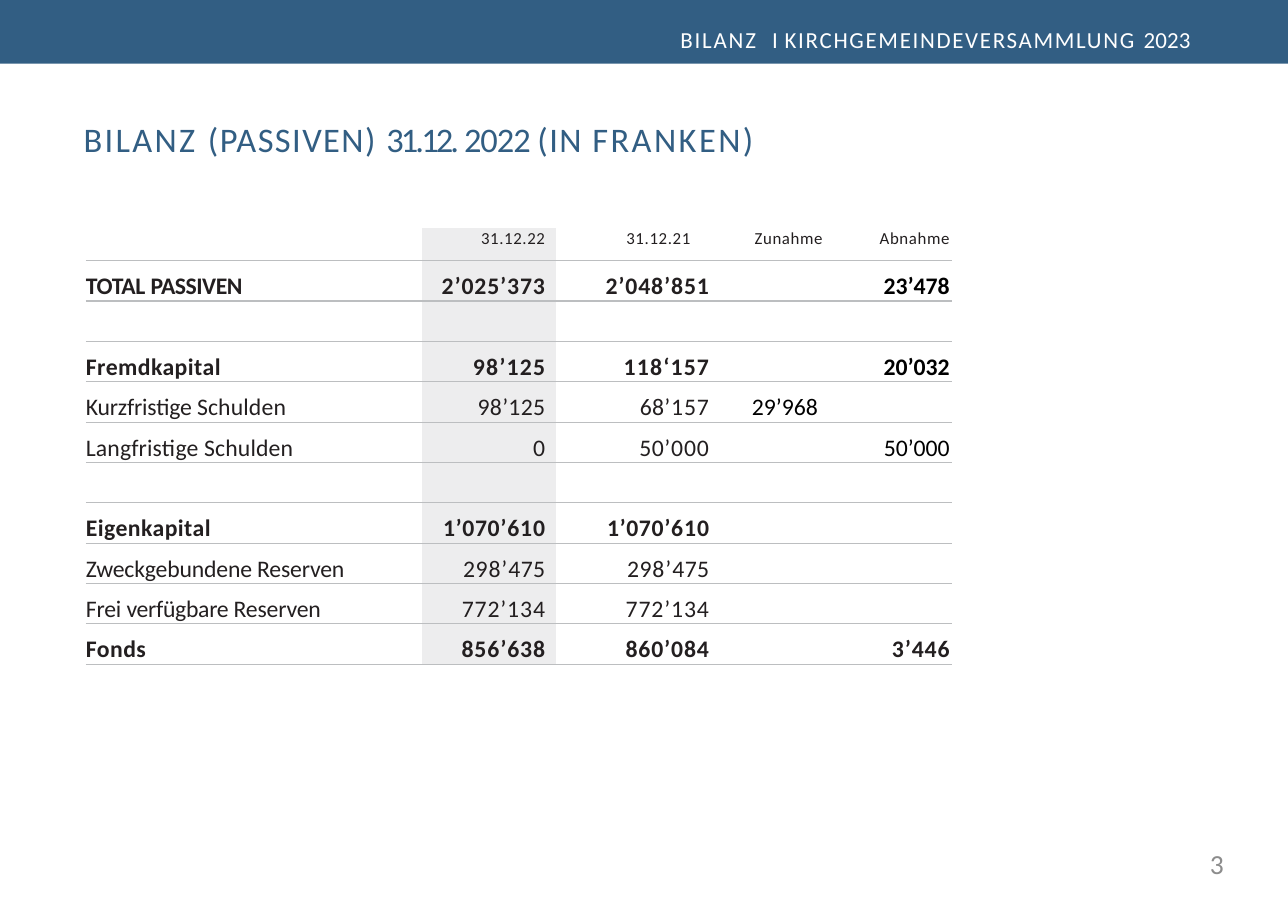
import pptx
import pptx.dml.color
import pptx.enum.shapes
import pptx.enum.text
import pptx.oxml
import pptx.oxml.ns
import pptx.util

Cm = pptx.util.Cm
Pt = pptx.util.Pt
RGBColor = pptx.dml.color.RGBColor
Align = pptx.enum.text.PP_ALIGN
Anchor = pptx.enum.text.MSO_ANCHOR

BLUE = RGBColor(0x32, 0x5E, 0x83)
WHITE = RGBColor(0xFF, 0xFF, 0xFF)
INK = RGBColor(0x23, 0x1F, 0x20)
BLACK = RGBColor(0x00, 0x00, 0x00)
PAGE_GREY = RGBColor(0x8C, 0x8C, 0x8C)
COLUMN_GREY = RGBColor(0xED, 0xED, 0xEE)
RULE_GREY = RGBColor(0xBC, 0xBE, 0xC0)

NO_MARGINS = dict.fromkeys(
    ("margin_left", "margin_right", "margin_top", "margin_bottom"), 0)

# Each text is a list of (wording, letter spacing in points)
HEADINGS = [[], [("31.12.22", 0.4)], [("31.12.21", 0.4)],
            [("Z", 0.3), ("unahme", 0.4)], [("Abnahme", 0.4)]]
EQUITY = [("1’070", 0.4), ("’610", 0.6)]
RESERVES = [("2", 0.4), ("98’", 0.6), ("4", 0.4), ("7", 0.1), ("5", 0)]
FREE_RESERVES = [("772’134", 0.6)]

# Bold, colour of the change, cells from left to right
BALANCE = [
    (True, BLACK, [[("TOTAL ", -0.2), ("PASSIVEN", -0.3)], [("2’025’373", 0.6)],
                   [("2’048’851", 0.6)], [], [("23’478", 0)]]),
    None,
    (True, BLACK, [[("Fremdkapital", 0.3)], [("98’125", 0.8)],
                   [("118‘157", 0.8)], [], [("20’032", 0)]]),
    (False, BLACK, [[("Kurzfristige ", -0.1), ("Schulden", 0.1)], [("98’125", 0.2)],
                    [("68", 0.2), ("’157", 0.6)], [("29’968", 0)], []]),
    (False, BLACK, [[("Langfristige Schulden", 0.1)], [("0", 0.3)],
                    [("50", 0.3), ("’000", 0.6)], [], [("50’000", 0)]]),
    None,
    (True, BLACK, [[("Eigenkapital", 0.3)], EQUITY, EQUITY, [], []]),
    (False, BLACK, [[("Zweckgebundene Reserven", -0.1)], RESERVES, RESERVES, [], []]),
    (False, BLACK, [[("Frei ", -0.1), ("verfügbare ", -0.2), ("Reserven", -0.1)],
                    FREE_RESERVES, FREE_RESERVES, [], []]),
    (True, INK, [[("Fonds", 0.3)], [("856’638", 0.6)], [("860’084", 0.6)],
                 [], [("3’446", 0.6)]]),
]

COLUMN_WIDTHS = [7.75, 3.1, 3.78, 2.79, 2.55]
RIGHT_MARGINS = [0, 0.26, 0.26, 0, 0.05]
HEADING_MARGINS = [0, 0.26, 0.69, 0.43, 0.05]
INCREASE_INDENT = 0.73
HEADING_HEIGHT, ROW_HEIGHT = 0.75, 0.93


def assign(target, values):
    for name, value in values.items():
        setattr(target, name, value)


class BalanceSlide:
    font_name = "Calibri"
    rule_width = Pt(0.88)

    def __init__(self, deck):
        self.slide = deck.slides.add_slide(deck.slide_layouts[6])

    def typeset(self, paragraph, pieces, size, color, bold=False, align=Align.LEFT, before=0):
        assign(paragraph, {"alignment": align, "space_before": Pt(before)})
        for wording, spacing in pieces:
            run = paragraph.add_run()
            run.text = wording
            assign(run.font, {"name": self.font_name, "size": Pt(size), "bold": bold})
            run.font.color.rgb = color
            run._r.get_or_add_rPr().set("spc", str(round(spacing * 100)))
        if not pieces:
            end = pptx.oxml.parse_xml(
                f'<a:endParaRPr {pptx.oxml.ns.nsdecls("a")} sz="{round(size * 100)}"/>')
            paragraph._p.append(end)

    def band(self, left, top, width, height, color):
        band = self.slide.shapes.add_shape(
            pptx.enum.shapes.MSO_SHAPE.RECTANGLE, left, top, width, height)
        band.shadow.inherit = False
        band.fill.solid()
        band.fill.fore_color.rgb = color
        band.line.fill.background()

    def text(self, left, top, width, height, pieces, size, color, align=Align.LEFT):
        frame = self.slide.shapes.add_textbox(
            Cm(left), Cm(top), Cm(width), Cm(height)).text_frame
        assign(frame, {**NO_MARGINS, "word_wrap": True,
                       "auto_size": pptx.enum.text.MSO_AUTO_SIZE.SHAPE_TO_FIT_TEXT})
        self.typeset(frame.paragraphs[0], pieces, size, color, align=align)

    def borders(self, cell, top):
        properties = cell._tc.get_or_add_tcPr()
        for side, ruled in {"L": False, "R": False, "T": top, "B": True}.items():
            paint = (f'<a:solidFill><a:srgbClr val="{RULE_GREY}"/></a:solidFill>'
                     if ruled else "<a:noFill/>")
            properties.append(pptx.oxml.parse_xml(
                f'<a:ln{side} {pptx.oxml.ns.nsdecls("a")} w="{self.rule_width}">'
                f"{paint}</a:ln{side}>"))

    def table(self, left, top, headings, balance):
        height = HEADING_HEIGHT + ROW_HEIGHT * len(balance)
        table = self.slide.shapes.add_table(
            len(balance) + 1, len(headings), Cm(left), Cm(top),
            Cm(sum(COLUMN_WIDTHS)), Cm(height)).table
        assign(table, {"first_row": False, "horz_banding": False})
        for column, width in zip(table.columns, COLUMN_WIDTHS):
            column.width = Cm(width)

        for r, entry in enumerate([(False, INK, headings)] + balance):
            heading = r == 0
            table.rows[r].height = Cm(HEADING_HEIGHT if heading else ROW_HEIGHT)
            bold, change_color, texts = entry or (False, INK, [[]] * len(headings))
            margins = HEADING_MARGINS if heading else RIGHT_MARGINS
            for c, pieces in enumerate(texts):
                cell = table.cell(r, c)
                increase = c == 3 and not heading
                assign(cell, {
                    **NO_MARGINS,
                    "margin_left": Cm(INCREASE_INDENT if increase else 0),
                    "margin_right": Cm(margins[c]),
                    "vertical_anchor": Anchor.TOP if heading else Anchor.BOTTOM})
                self.borders(cell, top=not heading)
                if c == 1:
                    cell.fill.solid()
                    cell.fill.fore_color.rgb = COLUMN_GREY
                else:
                    cell.fill.background()
                self.typeset(cell.text_frame.paragraphs[0], pieces,
                             size=11 if heading else 15.5,
                             color=change_color if c >= 3 else INK, bold=bold,
                             align=Align.LEFT if c == 0 or increase else Align.RIGHT,
                             before=0.8 if heading else 3)
            if entry is None:
                table.cell(r, 3).merge(table.cell(r, 4))


def main():
    deck = pptx.Presentation()
    assign(deck, {"slide_width": Cm(29.7), "slide_height": Cm(21)})
    page = BalanceSlide(deck)

    # Header band
    page.band(0, 0, deck.slide_width, Cm(1.47), BLUE)
    page.text(15.69, 0.58, 12.01, 0.64,
              [("BILANZ", 1.2), (" ", 5.8), ("I ", 0.5),
               ("KIRCHGEMEINDEVERSAMMLUNG ", 1.1), ("2023", 0.1)], 15, WHITE)

    # Title
    page.text(1.93, 2.72, 25.86, 0.97,
              [("BILANZ ", 1.5), ("(PASSIVEN) ", 0.9), ("31.12. ", -1.9),
               ("2022 ", -0.7), ("(IN ", 0.9), ("FRANKEN)", 1.6)], 22.5, BLUE)

    # Balance sheet
    page.table(1.98, 5.26, HEADINGS, BALANCE)

    # Page number
    page.text(21.39, 19.53, 6.83, 1.04, [("3", 0)], 18, PAGE_GREY, Align.RIGHT)

    deck.save("out.pptx")


if __name__ == "__main__":
    main()
